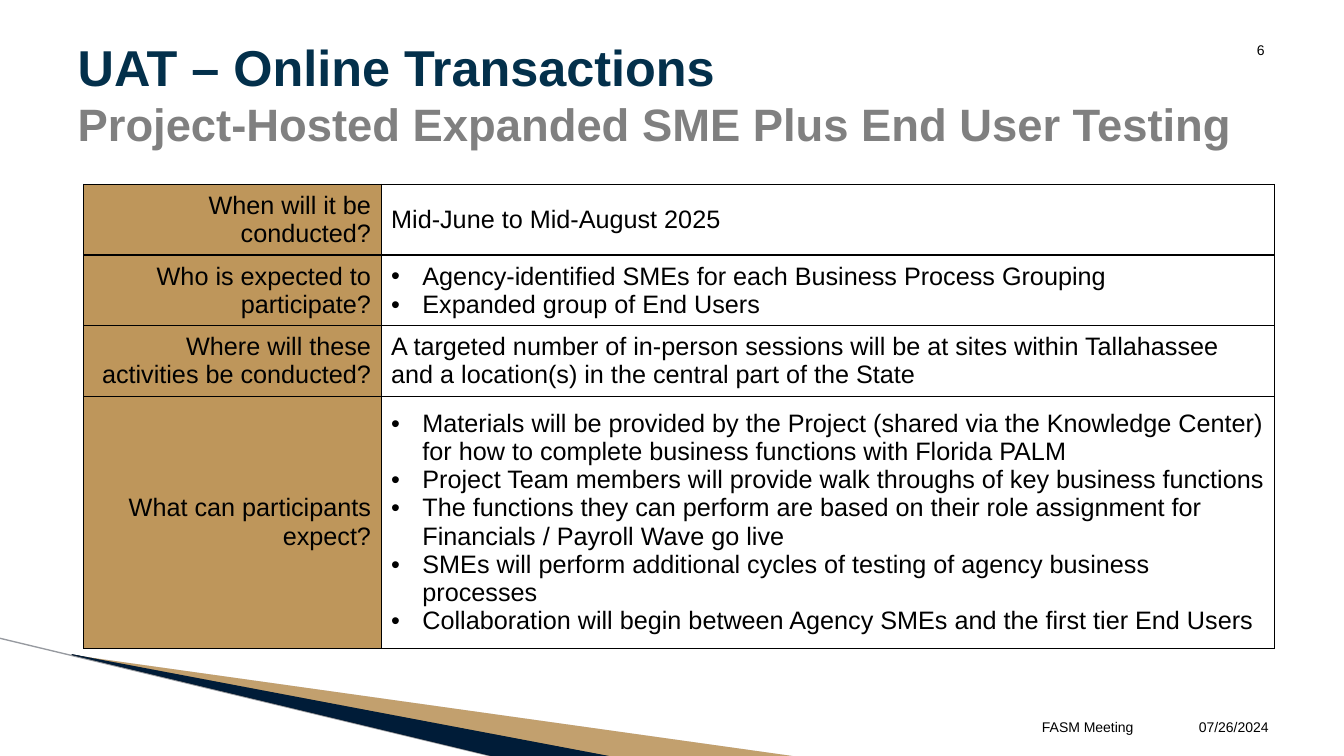
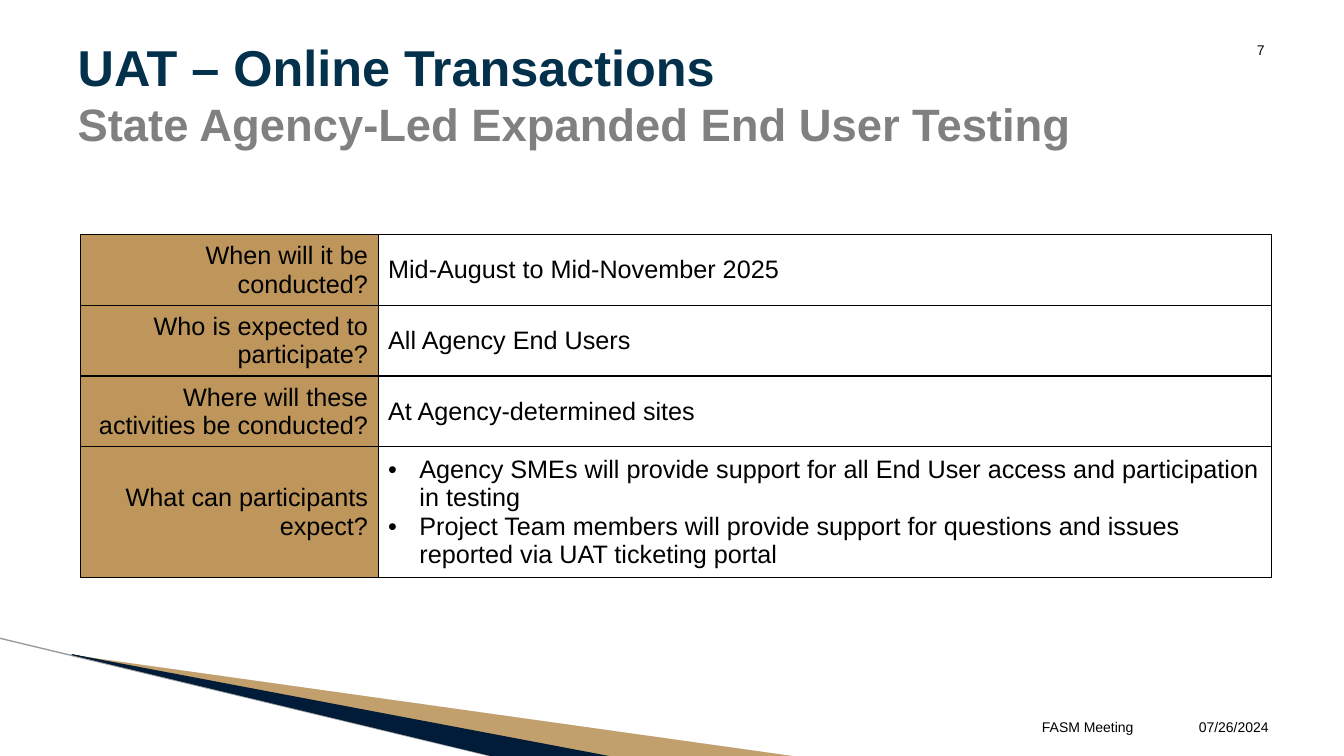
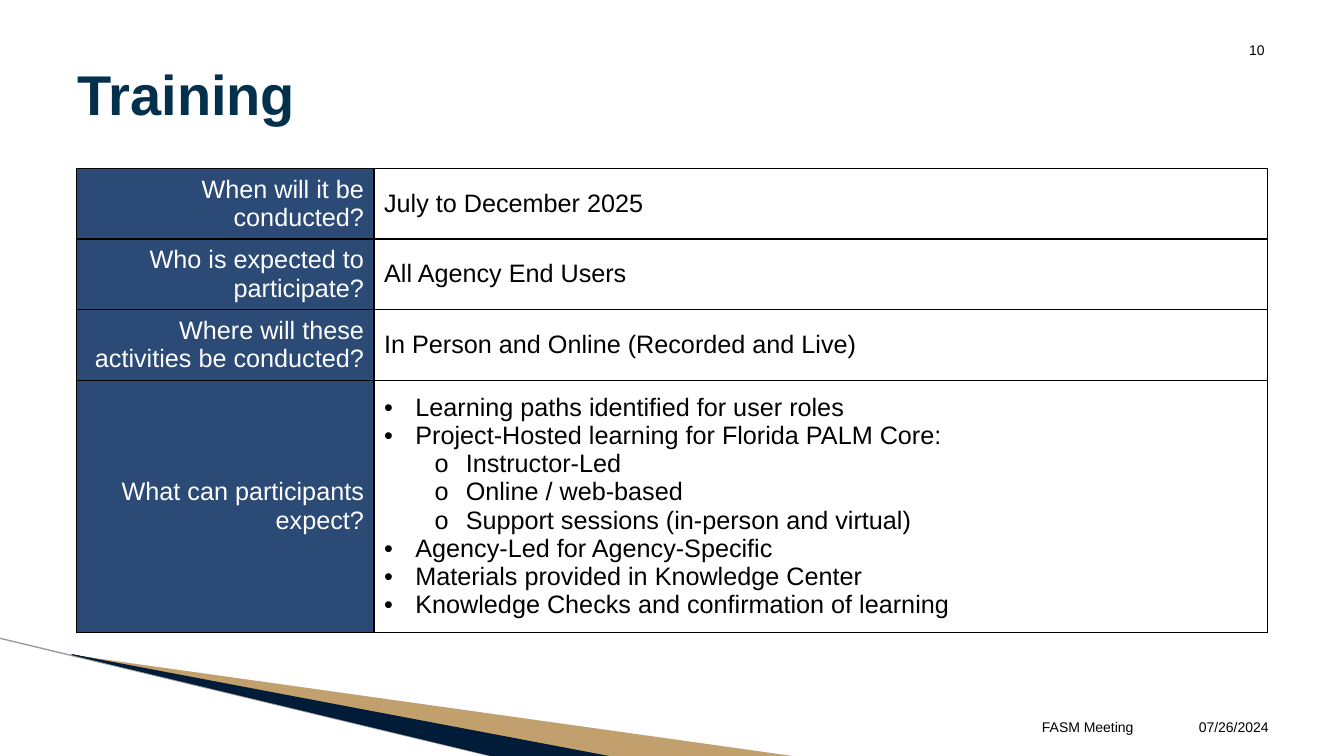
"""Build three schedule slides for testing and training, saved to out.pptx."""
import copy

import pptx
import pptx.dml.color
import pptx.enum.shapes
import pptx.enum.text
import pptx.oxml
import pptx.oxml.ns
import pptx.util

PX = 9144


class Theme:
    font = "Arial"
    title = "03304B"
    subtitle = "808080"
    text = "000000"
    light_text = "FFFFFF"
    gold = "BE965B"
    blue = "2B4A76"
    navy = "001C38"
    gray = "A1A4AA"
    line = "979AA0"
    border = "000000"
    title_size = 40
    two_line_size = 36
    subtitle_size = 32.4
    table_size = 18
    footer_size = 10


def format_run(run, size, color, bold=False):
    run.font.name = Theme.font
    run.font.size = pptx.util.Pt(size)
    run.font.bold = bold
    run.font.color.rgb = pptx.dml.color.RGBColor.from_string(color)


def add_xml(parent, markup):
    namespace = pptx.oxml.ns.nsdecls("a")
    tag, rest = markup.split(" ", 1)
    parent.append(pptx.oxml.parse_xml(f"{tag} {namespace} {rest}"))


QUESTIONS = [
    "When will it be conducted?",
    "Who is expected to participate?",
    "Where will these activities be conducted?",
    "What can participants expect?",
]

SLIDES = [
    {
        "number": "6",
        "title": "UAT – Online Transactions",
        "subtitle": "Project-Hosted Expanded SME Plus End User Testing",
        "title_width": 1208,
        "table_at": (83, 183),
        "last_row": 234,
        "fill": Theme.gold,
        "question_color": Theme.text,
        "answers": [
            "Mid-June to Mid-August 2025",
            [
                (0, "Agency-identified SMEs for each Business Process Grouping"),
                (0, "Expanded group of End Users"),
            ],
            "A targeted number of in-person sessions will be at sites within Tallahassee "
            "and a location(s) in the central part of the State",
            [
                (0, "Materials will be provided by the Project (shared via the Knowledge Center) "
                    "for how to complete business functions with Florida PALM"),
                (0, "Project Team members will provide walk throughs of key business functions"),
                (0, "The functions they can perform are based on their role assignment for "
                    "Financials / Payroll Wave go live"),
                (0, "SMEs will perform additional cycles of testing of agency business processes"),
                (0, "Collaboration will begin between Agency SMEs and the first tier End Users"),
            ],
        ],
    },
    {
        "number": "7",
        "title": "UAT – Online Transactions",
        "subtitle": "State Agency-Led Expanded End User Testing",
        "title_width": 1208,
        "table_at": (80, 233),
        "last_row": 122,
        "fill": Theme.gold,
        "question_color": Theme.text,
        "answers": [
            "Mid-August to Mid-November 2025",
            "All Agency End Users",
            "At Agency-determined sites",
            [
                (0, "Agency SMEs will provide support for all End User access and participation "
                    "in testing"),
                (0, "Project Team members will provide support for questions and issues "
                    "reported via UAT ticketing portal"),
            ],
        ],
    },
    {
        "number": "10",
        "title": "Training",
        "subtitle": "",
        "title_width": 1108,
        "table_at": (76, 167),
        "last_row": 234,
        "fill": Theme.blue,
        "question_color": Theme.light_text,
        "answers": [
            "July to December 2025",
            "All Agency End Users",
            "In Person and Online (Recorded and Live)",
            [
                (0, "Learning paths identified for user roles"),
                (0, "Project-Hosted learning for Florida PALM Core:"),
                (1, "Instructor-Led"),
                (1, "Online / web-based"),
                (1, "Support sessions (in-person and virtual)"),
                (0, "Agency-Led for Agency-Specific"),
                (0, "Materials provided in Knowledge Center"),
                (0, "Knowledge Checks and confirmation of learning"),
            ],
        ],
    },
]

UPPER_WEDGE = [(73, 650), (793, 751), (608, 751)]
LOWER_WEDGE = [(71, 649), (609, 751), (496, 752), (72, 650)]
WEDGES = [
    (UPPER_WEDGE, Theme.gray, 40),
    (LOWER_WEDGE, Theme.border, 100),
    (UPPER_WEDGE, Theme.gold, 85),
    (LOWER_WEDGE, Theme.navy, 100),
]
COLUMN_WIDTHS = [295, 886]
ROW_HEIGHT = 66
BULLET_INDENT = 31
LEVEL_INDENT = 50

presentation = pptx.Presentation()
presentation.slide_width = 1333 * PX
presentation.slide_height = 750 * PX

for content in SLIDES:
    slide = presentation.slides.add_slide(presentation.slide_layouts[5])

    line = slide.shapes.add_connector(
        pptx.enum.shapes.MSO_CONNECTOR.STRAIGHT, -1 * PX, 633 * PX, 495 * PX, 752 * PX)
    line.line.color.rgb = pptx.dml.color.RGBColor.from_string(Theme.line)
    line.line.width = pptx.util.Pt(0.95)
    add_xml(line._element.spPr, "<a:effectLst />")

    for points, color, opacity in WEDGES:
        builder = slide.shapes.build_freeform(*points[0], scale=PX)
        builder.add_line_segments(points[1:], close=True)
        wedge = builder.convert_to_shape()
        wedge.shadow.inherit = False
        wedge.line.fill.background()
        wedge.fill.solid()
        wedge.fill.fore_color.rgb = pptx.dml.color.RGBColor.from_string(color)
        if opacity < 100:
            fill_color = wedge._element.spPr.find(".//" + pptx.oxml.ns.qn("a:srgbClr"))
            add_xml(fill_color, f'<a:alpha val="{opacity * 1000}"/>')

    title = slide.shapes.title
    title.left, title.top = 67 * PX, 30 * PX
    title.width, title.height = content["title_width"] * PX, 125 * PX
    title.text_frame.text = "\v".join(filter(None, [content["title"], content["subtitle"]]))
    title.text_frame.word_wrap = True
    title.text_frame.auto_size = pptx.enum.text.MSO_AUTO_SIZE.NONE
    title.text_frame.vertical_anchor = pptx.enum.text.MSO_ANCHOR.MIDDLE
    paragraph = title.text_frame.paragraphs[0]
    paragraph.alignment = pptx.enum.text.PP_ALIGN.LEFT
    title_size = Theme.two_line_size if content["subtitle"] else Theme.title_size
    styles = [(title_size, Theme.title), (Theme.subtitle_size, Theme.subtitle)]
    for run, (size, color) in zip(paragraph.runs, styles):
        format_run(run, size, color, bold=True)
    for line_break in paragraph._p.findall(pptx.oxml.ns.qn("a:br")):
        line_break.append(copy.deepcopy(paragraph.runs[0]._r.rPr))

    labels = [
        (content["number"], 1175, 30, 89),
        ("07/26/2024", 1150, 701, 118),
        ("FASM Meeting", 717, 701, 417),
    ]
    for text, left, top, width in labels:
        label = slide.shapes.add_textbox(left * PX, top * PX, width * PX, 40 * PX)
        label.text_frame.text = text
        label.text_frame.word_wrap = True
        label.text_frame.vertical_anchor = pptx.enum.text.MSO_ANCHOR.MIDDLE
        paragraph = label.text_frame.paragraphs[0]
        paragraph.alignment = pptx.enum.text.PP_ALIGN.RIGHT
        format_run(paragraph.runs[0], Theme.footer_size, Theme.text)

    left, top = content["table_at"]
    heights = [ROW_HEIGHT] * 3 + [content["last_row"]]
    table = slide.shapes.add_table(
        len(heights), len(COLUMN_WIDTHS), left * PX, top * PX,
        sum(COLUMN_WIDTHS) * PX, sum(heights) * PX).table
    table.first_row = False
    table.horz_banding = False
    for column, width in zip(table.columns, COLUMN_WIDTHS):
        column.width = width * PX
    for row, height in zip(table.rows, heights):
        row.height = height * PX

    for row, question, answer in zip(table.rows, QUESTIONS, content["answers"]):
        question_cell, answer_cell = row.cells
        for cell in row.cells:
            cell.vertical_anchor = pptx.enum.text.MSO_ANCHOR.MIDDLE
            for side in ("lnL", "lnR", "lnT", "lnB"):
                add_xml(cell._tc.get_or_add_tcPr(),
                        f'<a:{side} w="12700"><a:solidFill><a:srgbClr val="{Theme.border}"/>'
                        f"</a:solidFill></a:{side}>")

        question_cell.fill.solid()
        question_cell.fill.fore_color.rgb = pptx.dml.color.RGBColor.from_string(content["fill"])
        question_cell.text_frame.text = question
        paragraph = question_cell.text_frame.paragraphs[0]
        paragraph.alignment = pptx.enum.text.PP_ALIGN.RIGHT
        format_run(paragraph.runs[0], Theme.table_size, content["question_color"])

        answer_cell.fill.background()
        bulleted = isinstance(answer, list)
        items = answer if bulleted else [(0, answer)]
        answer_cell.text_frame.text = "\n".join(text for level, text in items)
        for paragraph, (level, text) in zip(answer_cell.text_frame.paragraphs, items):
            format_run(paragraph.runs[0], Theme.table_size, Theme.text)
            if bulleted:
                paragraph.level = level
                properties = paragraph._p.get_or_add_pPr()
                properties.set("marL", str((BULLET_INDENT + level * LEVEL_INDENT) * PX))
                properties.set("indent", str(-BULLET_INDENT * PX))
                add_xml(properties, f'<a:buFont typeface="{Theme.font}"/>')
                add_xml(properties, f'<a:buChar char="{"•o"[level]}"/>')

presentation.save("out.pptx")
